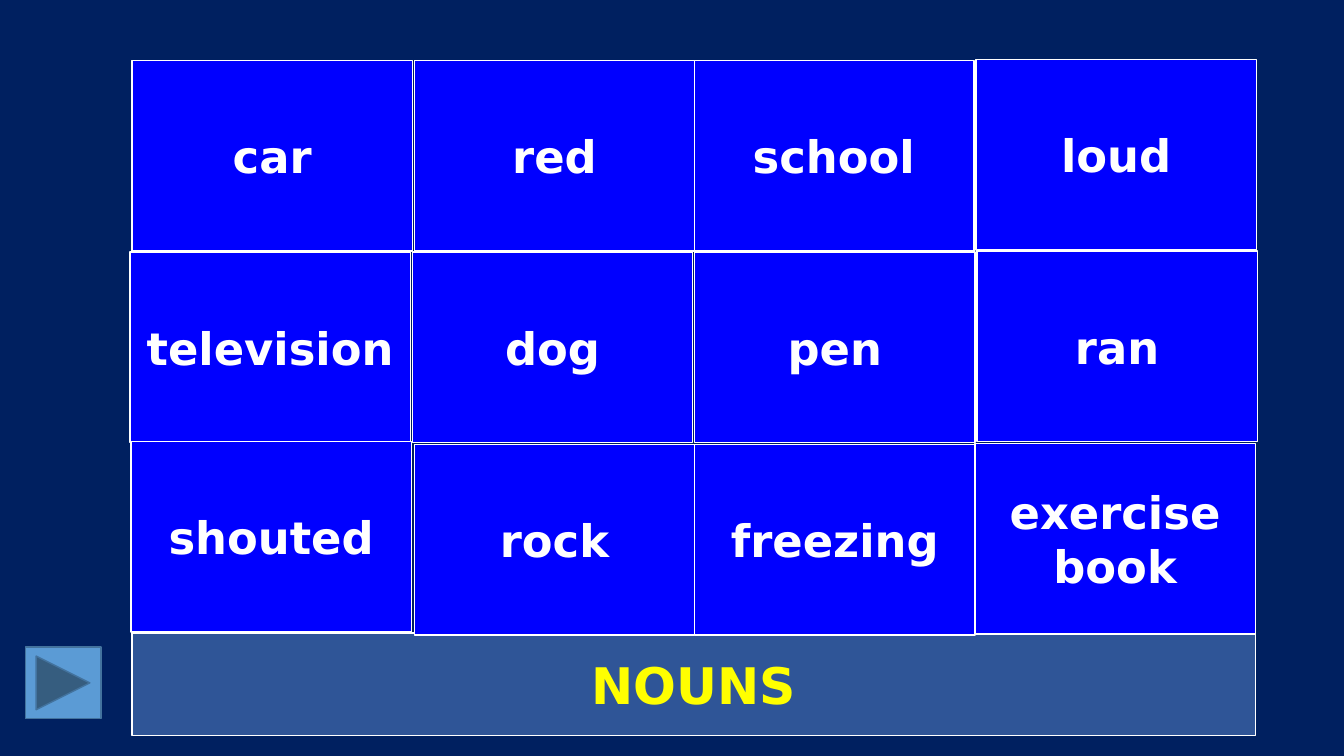
"""Build the word-sorting slide with a grid of tiles above the NOUNS bar."""
from dataclasses import dataclass

from pptx import Presentation
from pptx.dml.color import RGBColor
from pptx.enum.shapes import MSO_SHAPE as Preset
from pptx.enum.text import MSO_ANCHOR as Anchor, PP_ALIGN as Align
from pptx.slide import Slide
from pptx.util import Inches, Pt

COLORS = {
    "night": "002060",
    "blue": "0000FF",
    "bar": "2F5597",
    "white": "FFFFFF",
    "yellow": "FFFF00",
    "button": "5B9BD5",
    "button_edge": "43739E",
}
COLUMN_LEFTS = (1.31, 4.09, 6.88, 9.66)
ROW_TOPS = (0.6, 2.49, 4.38)
TILE_WIDTH, TILE_HEIGHT = 2.78, 1.89


@dataclass(frozen=True)
class Tile:
    column: int
    row: int
    word: str
    shift_x: float = 0
    shift_y: float = 0


@dataclass(frozen=True)
class Block:
    left: float
    top: float
    width: float
    height: float
    fill: str
    edge: str = "white"
    text: str = ""
    text_color: str = "white"
    text_size: int = 32
    preset: Preset = Preset.RECTANGLE


WORD_TILES = (
    Tile(0, 0, "car"),
    Tile(2, 0, "school"),
    Tile(0, 1, "television", -0.02, 0.01),
    Tile(1, 1, "dog", 0, 0.01),
    Tile(2, 1, "pen", 0.01, 0.01),
    Tile(1, 2, "rock", 0.02, 0.03),
    Tile(3, 2, "exercise book", 0.01, 0.02),
    Tile(1, 0, "red", 0.02),
    Tile(3, 0, "loud", 0.02, -0.01),
    Tile(3, 1, "ran", 0.03),
    Tile(0, 2, "shouted", -0.01),
    Tile(2, 2, "freezing", 0.01, 0.03),
)
NOUNS_BAR = Block(1.31, 6.28, 11.14, 1.02, "bar", text="NOUNS",
                  text_color="yellow", text_size=36)
NEXT_BUTTON = Block(0.25, 6.42, 0.75, 0.71, "button", "button_edge",
                    preset=Preset.ACTION_BUTTON_FORWARD_OR_NEXT)


def color(name: str) -> RGBColor:
    return RGBColor.from_string(COLORS[name])


def tile_block(tile: Tile) -> Block:
    left = COLUMN_LEFTS[tile.column] + tile.shift_x
    top = ROW_TOPS[tile.row] + tile.shift_y
    return Block(left, top, TILE_WIDTH, TILE_HEIGHT, "blue", text=tile.word)


def draw_block(page: Slide, block: Block) -> None:
    place = (block.left, block.top, block.width, block.height)
    box = page.shapes.add_shape(block.preset, *map(Inches, place))
    box.shadow.inherit = False
    box.fill.solid()
    box.fill.fore_color.rgb = color(block.fill)
    box.line.color.rgb = color(block.edge)
    box.line.width = Pt(1)
    if not block.text:
        return
    frame = box.text_frame
    frame.word_wrap = True
    frame.vertical_anchor = Anchor.MIDDLE
    para = frame.paragraphs[0]
    para.alignment = Align.CENTER
    span = para.add_run()
    span.text = block.text
    formats = {"name": "DejaVu Sans", "size": Pt(block.text_size), "bold": True}
    for attribute, value in formats.items():
        setattr(span.font, attribute, value)
    span.font.color.rgb = color(block.text_color)


def main() -> None:
    deck = Presentation()
    deck.slide_width, deck.slide_height = Inches(13.33), Inches(7.5)
    page = deck.slides.add_slide(deck.slide_layouts[6])
    page.background.fill.solid()
    page.background.fill.fore_color.rgb = color("night")
    for block in (NOUNS_BAR, *map(tile_block, WORD_TILES), NEXT_BUTTON):
        draw_block(page, block)
    deck.save("out.pptx")


if __name__ == "__main__":
    main()
